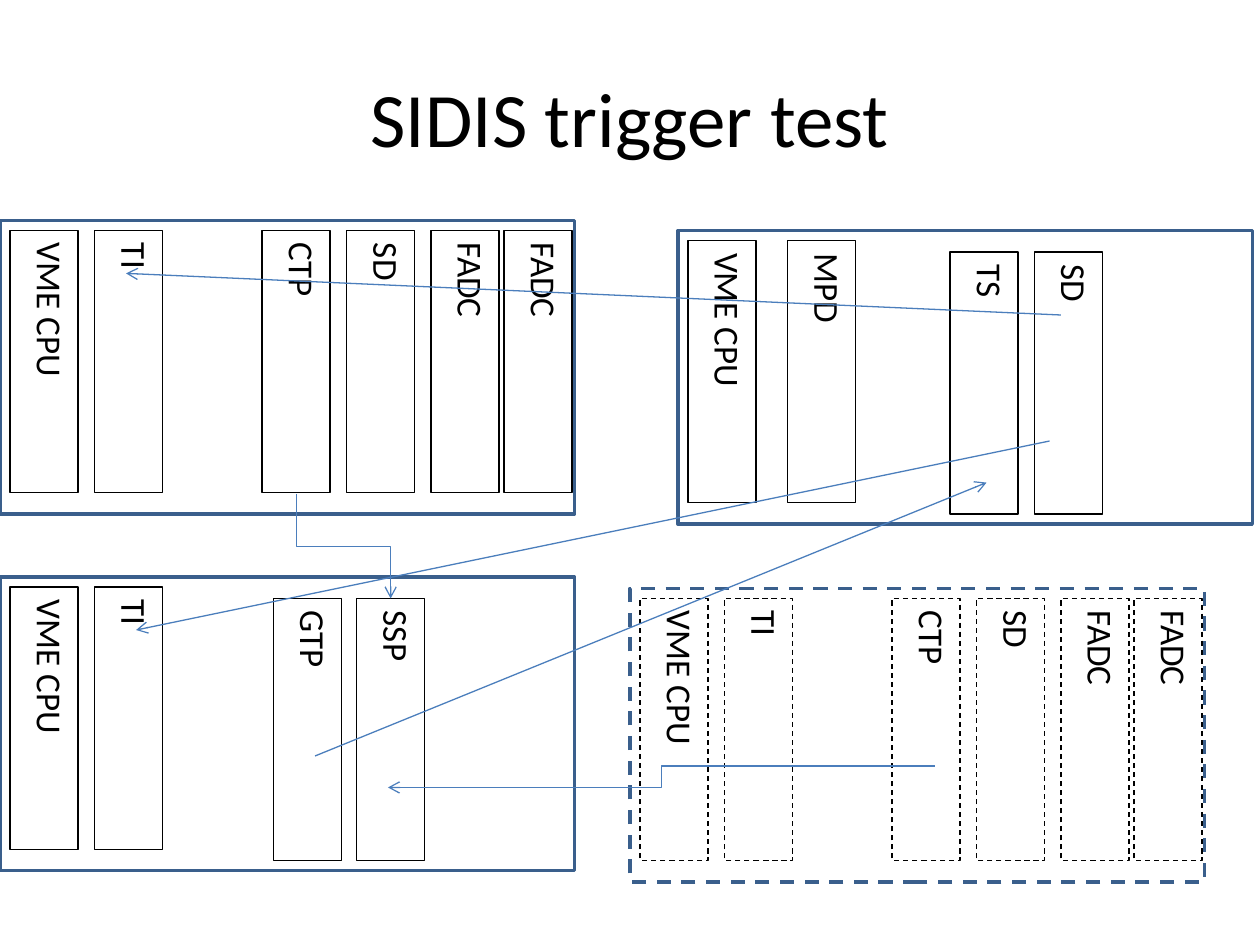
from lxml.etree import SubElement
from pptx import Presentation
from pptx.dml.color import RGBColor
from pptx.enum.dml import MSO_LINE
from pptx.enum.shapes import MSO_CONNECTOR, MSO_SHAPE
from pptx.enum.text import MSO_ANCHOR, PP_ALIGN
from pptx.oxml.ns import qn
from pptx.util import Inches, Pt

# Content: each module is (label, x, y) measured from its crate's corner
TITLE = "SIDIS trigger test"
FULL_CRATE = [("VME CPU", 0.08, 0.08), ("TI", 0.75, 0.08), ("CTP", 2.08, 0.08),
              ("SD", 2.75, 0.08), ("FADC", 3.42, 0.08), ("FADC", 4, 0.08)]
GTP_CRATE = [("VME CPU", 0.08, 0.08), ("TI", 0.75, 0.08),
             ("GTP", 2.17, 0.17), ("SSP", 2.83, 0.17)]
TS_CRATE = [("VME CPU", 0.08, 0.08), ("TS", 2.16, 0.17),
            ("SD", 2.83, 0.17), ("MPD", 0.87, 0.08)]
# left, top, modules, dashed, grouped
CRATES = [
    (0, 1.75, FULL_CRATE, False, True),
    (0, 4.58, GTP_CRATE, False, True),
    (5.38, 1.83, TS_CRATE, False, False),
    (5, 4.67, FULL_CRATE, True, True),
]
# kind, start, end
SIGNALS = [
    ("elbow down", (2.35, 3.92), (3.1, 4.75)),
    ("straight", (2.5, 6), (7.83, 3.83)),
    ("straight", (8.42, 2.5), (1, 2.17)),
    ("straight", (8.33, 3.5), (1.08, 5)),
    ("elbow across", (7.42, 6.08), (3.08, 6.25)),
]

CRATE_SIZE = (4.56, 2.33)
MODULE_SIZE = (0.54, 2.08)
BLACK, CRATE_BLUE, SIGNAL_BLUE = "000000", "3A5F8C", "4B7EBC"


def color(value):
    return RGBColor.from_string(value)


def set_line(shape, line_color, width, dashed=False):
    shape.line.color.rgb = color(line_color)
    shape.line.width = Pt(width)
    if dashed:
        shape.line.dash_style = MSO_LINE.DASH


def add_text(shapes, box, text, size, frame_format, alignment):
    shape = shapes.add_textbox(*map(Inches, box))
    frame = shape.text_frame
    for name, value in {"word_wrap": True, **frame_format}.items():
        setattr(frame, name, value)
    paragraph = frame.paragraphs[0]
    paragraph.text = text
    paragraph.alignment = alignment
    font = paragraph.runs[0].font
    for name, value in {"name": "Calibri", "size": Pt(size)}.items():
        setattr(font, name, value)
    font.color.rgb = color(BLACK)
    return shape


def add_crate(slide, left, top, modules, dashed, grouped):
    shapes = slide.shapes.add_group_shape().shapes if grouped else slide.shapes
    crate = shapes.add_shape(MSO_SHAPE.RECTANGLE, *map(Inches, (left, top, *CRATE_SIZE)))
    crate.shadow.inherit = False
    crate.fill.background()
    set_line(crate, CRATE_BLUE, 2, dashed)
    for label, x, y in modules:
        module = add_text(shapes, (left + x, top + y, *MODULE_SIZE), label, 20,
                          {"vertical_anchor": MSO_ANCHOR.TOP}, PP_ALIGN.LEFT)
        module.text_frame._txBody.bodyPr.set("vert", "eaVert")
        set_line(module, BLACK, 0.75, dashed)


def add_signal(slide, kind, start, end):
    turned = kind == "elbow down"
    if turned:
        # Lay the elbow on its side about its centre; the 270 degree turn restores it
        center_x, center_y = (start[0] + end[0]) / 2, (start[1] + end[1]) / 2
        start, end = [(center_x - (y - center_y), center_y + (x - center_x))
                      for x, y in (start, end)]
    connector_type = MSO_CONNECTOR.STRAIGHT if kind == "straight" else MSO_CONNECTOR.ELBOW
    signal = slide.shapes.add_connector(connector_type, *map(Inches, (*start, *end)))
    set_line(signal, SIGNAL_BLUE, 0.75)
    properties = signal._element.spPr
    if turned:
        properties.find(qn("a:xfrm")).set("rot", str(270 * 60000))
    SubElement(properties.find(qn("a:ln")), qn("a:tailEnd"), type="arrow")
    SubElement(properties, qn("a:effectLst"))


def main():
    presentation = Presentation()
    presentation.slide_width, presentation.slide_height = Inches(10), Inches(7.5)
    slide = presentation.slides.add_slide(presentation.slide_layouts[6])

    # Title
    add_text(slide.shapes, (0.5, 0.3, 9, 1.25), TITLE, 44,
             {"vertical_anchor": MSO_ANCHOR.MIDDLE}, PP_ALIGN.CENTER)

    # Crates with their modules, then the signals between them
    for crate in CRATES:
        add_crate(slide, *crate)
    for signal in SIGNALS:
        add_signal(slide, *signal)

    presentation.save("out.pptx")


if __name__ == "__main__":
    main()
